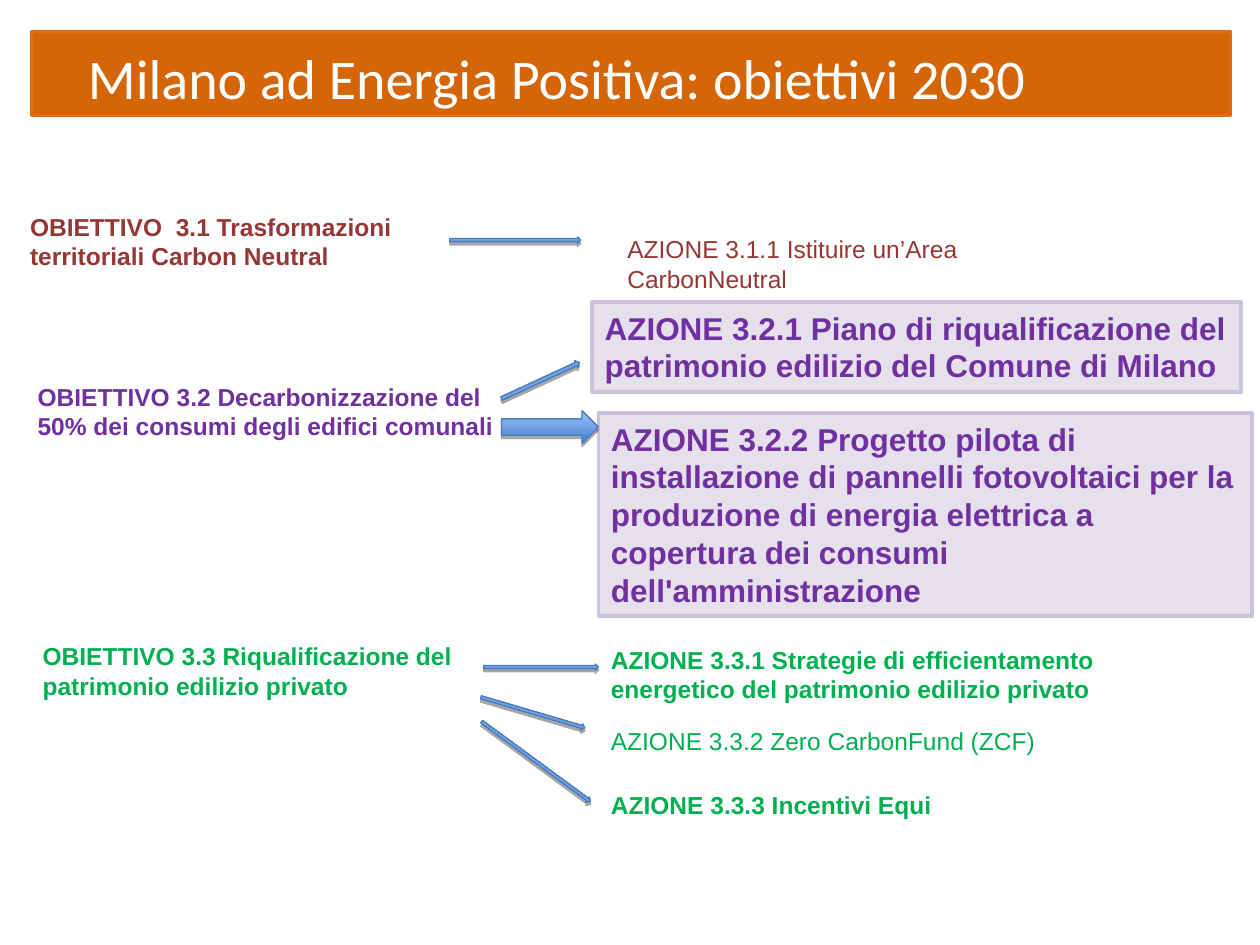
"""Build the slide on Milan's 2030 positive-energy goals and their actions."""
from lxml import etree
from pptx import Presentation
from pptx.dml.color import RGBColor
from pptx.enum.shapes import MSO_SHAPE
from pptx.enum.text import MSO_ANCHOR, PP_ALIGN
from pptx.oxml.ns import qn
from pptx.util import Pt

RECTANGLE, RIGHT_ARROW = MSO_SHAPE.RECTANGLE, MSO_SHAPE.RIGHT_ARROW
TOP, LEFT = MSO_ANCHOR.TOP, PP_ALIGN.LEFT

COLORS = {
    "bar": "D56509", "bar_line": "E46C0A", "title": "FFFFFF",
    "red": "953735", "purple": "7030A0", "green": "00B050",
    "panel": "E6E0EC", "panel_line": "CCC1DA",
    "arrow_dark": "3E7FCC", "arrow_light": "A4C1FF", "arrow_line": "4A7EBB",
    "shadow": "000000",
}

BAR = (18, 18, 685.4, 48.2)
TITLE = ("Milano ad Energia Positiva: obiettivi 2030", (43.2, 23.8, 664.6, 43.9))

LABELS = [
    ("OBIETTIVO  3.1 Trasformazioni territoriali Carbon Neutral",
     (10.1, 117.4, 275.8, 40.3), "red", True),
    ("OBIETTIVO 3.2 Decarbonizzazione del 50% dei consumi degli edifici comunali",
     (14.4, 214.6, 293.8, 40.3), "purple", True),
    ("OBIETTIVO 3.3 Riqualificazione del patrimonio edilizio privato",
     (17.3, 362.9, 275.8, 40.3), "green", True),
    ("AZIONE 3.1.1 Istituire un’Area CarbonNeutral",
     (351.4, 130.3, 268.6, 23.8), "red", False),
    ("AZIONE 3.3.1 Strategie di efficientamento energetico del patrimonio edilizio privato",
     (342, 365, 360, 40.3), "green", True),
    ("AZIONE 3.3.2 Zero CarbonFund (ZCF)",
     (342, 411.1, 324, 23.8), "green", False),
    ("AZIONE 3.3.3 Incentivi Equi",
     (342, 447.8, 324, 24.5), "green", True),
]

PANELS = [
    ("AZIONE 3.2.1 Piano di riqualificazione del patrimonio edilizio del Comune di Milano",
     (338.4, 172.8, 370.8, 51.1)),
    ("AZIONE 3.2.2 Progetto pilota di installazione di pannelli fotovoltaici per la "
     "produzione di energia elettrica a copertura dei consumi dell'amministrazione",
     (342, 236.2, 373.7, 115.9)),
]

ARROWS = [
    ((257, 135.4, 74.9, 3.6), 0),
    ((284.4, 215.3, 49, 4.3), 335.2),
    ((286.6, 234.7, 55.4, 18.7), 0),
    ((276.5, 379.4, 65.5, 3.6), 0),
    ((273.6, 405.4, 61.9, 3.6), 16.4),
    ((267.8, 433.4, 77, 3.6), 36.3),
]


def color(name):
    return RGBColor.from_string(COLORS[name])


def add_outlined(page, kind, place, line, width):
    shape = page.shapes.add_shape(kind, *map(Pt, place))
    shape.shadow.inherit = False
    shape.line.color.rgb = color(line)
    shape.line.width = Pt(width)
    return shape


def add_rectangle(page, place, fill, line, width):
    shape = add_outlined(page, RECTANGLE, place, line, width)
    shape.fill.solid()
    shape.fill.fore_color.rgb = color(fill)
    return shape


def write(box, text, ink, size=14, bold=False, font="Arial", spacing=None):
    frame = box.text_frame
    frame.word_wrap = True
    frame.vertical_anchor = TOP
    para = frame.paragraphs[0]
    para.alignment = LEFT
    if spacing:
        para.line_spacing = Pt(spacing)
    span = para.add_run()
    span.text = text
    span.font.name = font
    span.font.size = Pt(size)
    span.font.bold = bold
    span.font.color.rgb = color(ink)


def add_arrow(page, place, rotation):
    arrow = add_outlined(page, RIGHT_ARROW, place, "arrow_line", 0.75)
    arrow.rotation = rotation
    arrow.fill.gradient()
    arrow.fill.gradient_angle = 90
    for stop, name, position in zip(
            arrow.fill.gradient_stops, ("arrow_dark", "arrow_light"), (0, 1)):
        stop.color.rgb = color(name)
        stop.position = position
    effects = arrow._element.spPr.find(qn("a:effectLst"))
    shadow = etree.SubElement(effects, qn("a:outerShdw"), blurRad="0",
                              dist=str(Pt(1.8)), dir="5400000", rotWithShape="0")
    tint = etree.SubElement(shadow, qn("a:srgbClr"), val=COLORS["shadow"])
    etree.SubElement(tint, qn("a:alpha"), val="35000")


def main():
    deck = Presentation()
    deck.slide_width, deck.slide_height = Pt(720), Pt(540)
    page = deck.slides.add_slide(deck.slide_layouts[6])

    add_rectangle(page, BAR, "bar", "bar_line", 1.5)
    title, place = TITLE
    write(page.shapes.add_textbox(*map(Pt, place)), title, "title",
          size=32, font="Calibri", spacing=36)
    for text, place, ink, bold in LABELS:
        write(page.shapes.add_textbox(*map(Pt, place)), text, ink, bold=bold)
    for text, place in PANELS:
        panel = add_rectangle(page, place, "panel", "panel_line", 2.25)
        write(panel, text, "purple", size=18, bold=True)
    for place, rotation in ARROWS:
        add_arrow(page, place, rotation)

    deck.save("out.pptx")


if __name__ == "__main__":
    main()
